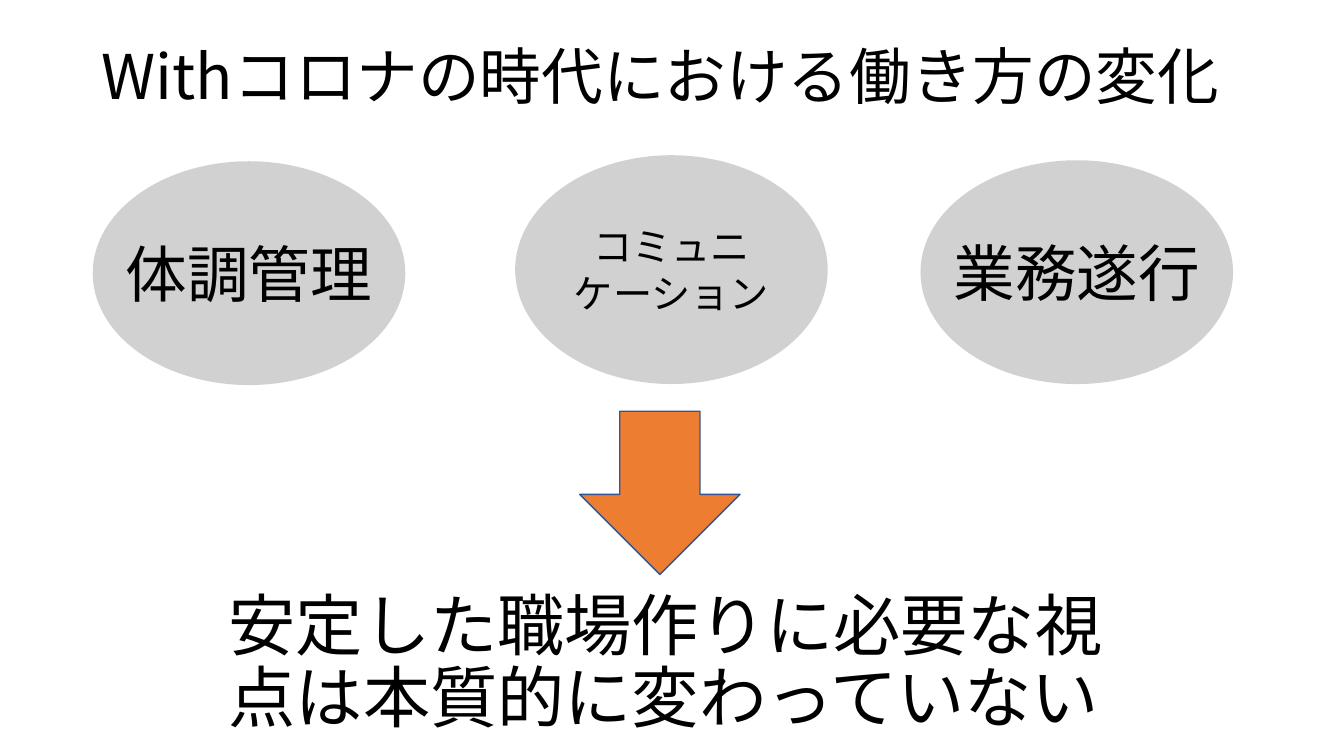
from lxml import etree
from pptx import Presentation
from pptx.dml.color import RGBColor
from pptx.enum.lang import MSO_LANGUAGE_ID as Language
from pptx.enum.shapes import MSO_SHAPE as Shape
from pptx.enum.text import MSO_ANCHOR as Anchor, PP_ALIGN as Align
from pptx.oxml.ns import qn
from pptx.util import Inches, Pt

TITLE = "Withコロナの時代における働き方の変化"
THEMES = [
    ("体調管理", 0.92, 1.6, 2.22, 44, False),
    ("コミュニケーション", 5.11, 1.54, 2.27, 28, True),
    ("業務遂行", 9.13, 1.59, 2.22, 44, False),
]
CONCLUSION = "安定した職場作りに必要な視点は本質的に変わっていない"

FONT = "Noto Sans CJK JP"
BLACK = RGBColor(0x00, 0x00, 0x00)
GRAY = RGBColor(0xA5, 0xA5, 0xA5)
ORANGE = RGBColor(0xED, 0x7D, 0x31)
NAVY = RGBColor(0x32, 0x54, 0x91)
THEME_WIDTH = 3.1


def write(holder, text, size, align=Align.LEFT, spacing=None, after=0, wrap=True, inset=None):
    frame = holder.text_frame
    frame.word_wrap = wrap
    frame.vertical_anchor = Anchor.MIDDLE
    if inset is not None:
        frame.margin_left = frame.margin_right = Inches(inset)
        frame.margin_top = frame.margin_bottom = Inches(inset)
    paragraph = frame.paragraphs[0]
    paragraph.alignment = align
    paragraph.line_spacing = spacing
    paragraph.space_after = Pt(after)
    run = paragraph.add_run()
    run.text = text
    run.font.size = Pt(size)
    run.font.color.rgb = BLACK
    run.font.name = FONT
    run.font.language_id = Language.JAPANESE
    etree.SubElement(run.font._element, qn("a:ea")).set("typeface", FONT)


def add_filled(slide, kind, box, color):
    shape = slide.shapes.add_shape(kind, *map(Inches, box))
    shape.shadow.inherit = False
    shape.fill.solid()
    shape.fill.fore_color.rgb = color
    return shape


def main():
    deck = Presentation()
    deck.slide_width, deck.slide_height = Inches(13.33), Inches(7.5)
    slide = deck.slides.add_slide(deck.slide_layouts[6])

    conclusion = slide.shapes.add_textbox(*map(Inches, (2.17, 5.49, 8.99, 2.21)))
    write(conclusion, CONCLUSION, 48, spacing=0.9)

    arrow = add_filled(slide, Shape.DOWN_ARROW, (5.75, 4.08, 1.59, 1.62), ORANGE)
    arrow.line.color.rgb = NAVY
    arrow.line.width = Pt(1)

    title = slide.shapes.add_textbox(*map(Inches, (0.91, 0, 11.5, 1.57)))
    write(title, TITLE, 44, spacing=0.9, after=6)

    for name, left, top, height, size, wrap in THEMES:
        theme = add_filled(slide, Shape.OVAL, (left, top, THEME_WIDTH, height), GRAY)
        theme.line.fill.background()
        color = theme._element.spPr.find(qn("a:solidFill"))[0]
        etree.SubElement(color, qn("a:alpha")).set("val", "50000")
        write(theme, name, size, align=Align.CENTER, wrap=wrap, inset=0 if wrap else None)

    deck.save("out.pptx")


if __name__ == "__main__":
    main()
